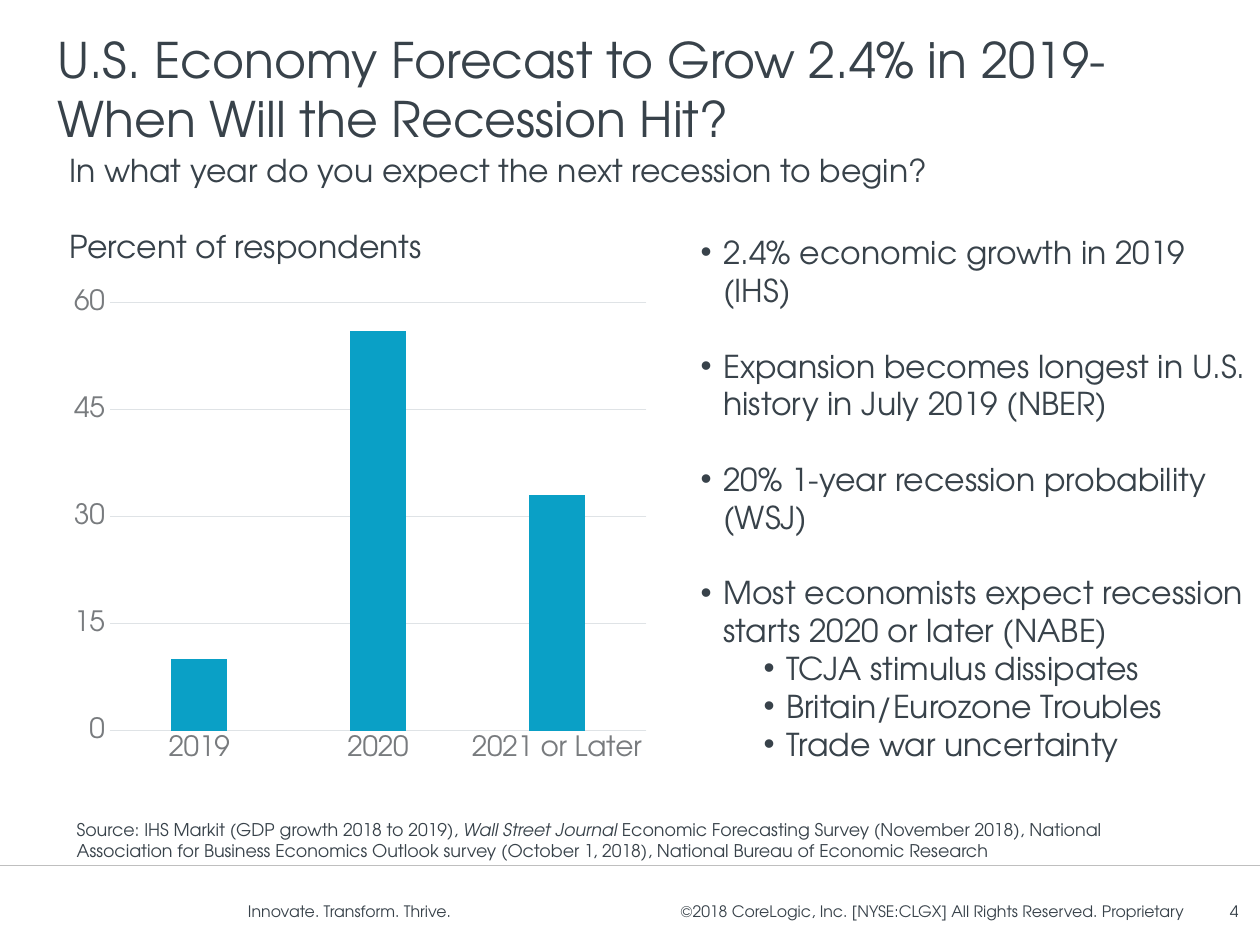
"""Build the recession forecast slide with its chart, bullets and footer."""
from dataclasses import dataclass
from typing import NamedTuple

from lxml.etree import SubElement
from pptx import Presentation
from pptx.chart.data import CategoryChartData
from pptx.dml.color import RGBColor
from pptx.enum.chart import XL_CHART_TYPE as CT, XL_TICK_MARK as TICK
from pptx.enum.shapes import MSO_CONNECTOR as CONN
from pptx.enum.text import MSO_ANCHOR as ANCHOR, MSO_AUTO_SIZE as FIT, PP_ALIGN as AL
from pptx.oxml.ns import qn
from pptx.util import Inches, Pt

FONT = "TeX Gyre Adventor"
COLORS = {"text": "38424A", "axis": "787B7E", "grid": "DFE3E6",
          "bar": "0AA0C6", "rule": "BFBFBF"}
SLIDE_W, SLIDE_H = 10, 7.5
RULE_Y = 6.87
LINE_WIDTH = Pt(0.75)
BODY_SIZE = 18
BLANK_LINE = 1.2 * BODY_SIZE
HANG = 0.18
LEVEL_STEP = 0.5


class Box(NamedTuple):
    left: float
    top: float
    width: float
    height: float


class Run(NamedTuple):
    text: str
    italic: bool = False


@dataclass
class Para:
    runs: list[Run]
    before: float = 0
    level: int = 0
    bullet: bool = False


@dataclass
class Block:
    box: Box
    paras: list[Para]
    size: float
    align: AL = AL.LEFT
    anchor: ANCHOR = ANCHOR.TOP
    wrap: bool = True
    inset: float = 0.1


CHART_BOX = Box(0.5, 2.21, 4.72, 4.13)
PLOT_BOX = Box(0.87, 2.4, 4.26, 3.4)
SURVEY = {"2019": 10, "2020": 56, "2021 or Later": 33}

POINTS = {
    "2.4% economic growth in 2019 (IHS)": [],
    "Expansion becomes longest in U.S. history in July 2019 (NBER)": [],
    "20% 1-year recession probability (WSJ)": [],
    "Most economists expect recession starts 2020 or later (NABE)": [
        "TCJA stimulus dissipates",
        "Britain/Eurozone Troubles",
        "Trade war uncertainty",
    ],
}


def plain(text: str, before: float = 0) -> Para:
    return Para([Run(text)], before)


def bullet_paras(points: dict[str, list[str]]) -> list[Para]:
    paras = []
    for point, details in points.items():
        before = BLANK_LINE if paras else 0
        paras.append(Para([Run(point)], before, bullet=True))
        paras += [Para([Run(detail)], level=1, bullet=True) for detail in details]
    return paras


TITLE = Block(Box(0.41, 0.22, 9.34, 1), [
    plain("U.S. Economy Forecast to Grow 2.4% in 2019-When Will the Recession Hit?"),
], 28, anchor=ANCHOR.BOTTOM, inset=0.05)

BODY = Block(Box(5.46, 1.8, 4.54, 4.34), bullet_paras(POINTS), BODY_SIZE)

CHART_HEADING = Block(Box(0.45, 1.15, 7.72, 1.01), [
    plain("In what year do you expect the next recession to begin?"),
    plain("Percent of respondents", BLANK_LINE),
], BODY_SIZE)

SOURCE = Block(Box(0.51, 6.45, 9.02, 0.44), [Para([
    Run("Source: IHS Markit (GDP growth 2018 to 2019), "),
    Run("Wall Street Journal ", italic=True),
    Run("Economic Forecasting Survey (November 2018), National Association for "
        "Business Economics Outlook survey (October 1, 2018), National Bureau of "
        "Economic Research"),
])], 10)

MOTTO = Block(Box(1.87, 7.11, 1.86, 0.25), [plain("Innovate. Transform. Thrive.")],
              9, wrap=False)

COPYRIGHT = Block(Box(4.35, 7.11, 5.14, 0.25), [
    plain("©2018 CoreLogic, Inc. [NYSE:CLGX] All Rights Reserved. Proprietary"),
], 9, AL.RIGHT)

PAGE_NUMBER = Block(Box(8.87, 7.1, 1.06, 0.26), [plain("4")], 9, AL.RIGHT, ANCHOR.MIDDLE)


def rgb(name: str) -> RGBColor:
    return RGBColor.from_string(COLORS[name])


def apply(obj, values: dict) -> None:
    for name, value in values.items():
        setattr(obj, name, value)


def style_font(font, size: float, color: str = "text", italic: bool = False) -> None:
    apply(font, {"name": FONT, "size": Pt(size), "bold": False, "italic": italic})
    font.color.rgb = rgb(color)


def style_line(line, color: str) -> None:
    line.color.rgb = rgb(color)
    line.width = LINE_WIDTH


def add_bullet(p, level: int) -> None:
    pPr = p._p.get_or_add_pPr()
    pPr.set("marL", str(Inches(HANG + LEVEL_STEP * level)))
    pPr.set("indent", str(Inches(-HANG)))
    SubElement(pPr, qn("a:buFont")).set("typeface", "Arial")
    SubElement(pPr, qn("a:buChar")).set("char", "•")


def write(sp, block: Block) -> None:
    apply(sp, {side: Inches(v) for side, v in block.box._asdict().items()})
    tf = sp.text_frame
    apply(tf, {"word_wrap": block.wrap, "auto_size": FIT.NONE,
               "vertical_anchor": block.anchor,
               "margin_left": Inches(block.inset), "margin_right": Inches(block.inset),
               "margin_top": Inches(0.05), "margin_bottom": Inches(0.05)})
    for i, para in enumerate(block.paras):
        p = tf.add_paragraph() if i else tf.paragraphs[0]
        apply(p, {"level": para.level, "alignment": block.align,
                  "space_before": Pt(para.before)})
        if para.bullet:
            add_bullet(p, para.level)
        for run in para.runs:
            r = p.add_run()
            r.text = run.text
            style_font(r.font, block.size, italic=run.italic)


def add_rule(s) -> None:
    y = Inches(RULE_Y)
    rule = s.shapes.add_connector(CONN.STRAIGHT, 0, y, Inches(SLIDE_W), y)
    style_line(rule.line, "rule")
    SubElement(rule._element.spPr, qn("a:effectLst"))


def fix_plot_area(chart, outer: Box, inner: Box) -> None:
    area = chart._chartSpace.chart.plotArea
    for old in area.findall(qn("c:layout")):
        area.remove(old)
    layout = SubElement(area, qn("c:layout"))
    area.insert(0, layout)
    manual = SubElement(layout, qn("c:manualLayout"))
    settings = {"layoutTarget": "inner", "xMode": "edge", "yMode": "edge",
                "x": (inner.left - outer.left) / outer.width,
                "y": (inner.top - outer.top) / outer.height,
                "w": inner.width / outer.width,
                "h": inner.height / outer.height}
    for tag, value in settings.items():
        SubElement(manual, qn(f"c:{tag}")).set("val", str(value))


def add_survey_chart(s) -> None:
    data = CategoryChartData(number_format="0")
    data.categories = list(SURVEY)
    data.add_series("Series 1", list(SURVEY.values()))
    frame = s.shapes.add_chart(CT.COLUMN_CLUSTERED, *map(Inches, CHART_BOX), data)
    chart = frame.chart
    apply(chart, {"has_legend": False, "has_title": False})
    plot = chart.plots[0]
    apply(plot, {"gap_width": 219, "overlap": -27, "vary_by_categories": False})
    fill = plot.series[0].format.fill
    fill.solid()
    fill.fore_color.rgb = rgb("bar")

    years, percent = chart.category_axis, chart.value_axis
    for axis in (years, percent):
        apply(axis, {"major_tick_mark": TICK.NONE, "minor_tick_mark": TICK.NONE})
        style_font(axis.tick_labels.font, 16, "axis")
    apply(percent, {"minimum_scale": 0, "maximum_scale": 60, "major_unit": 15})
    percent.format.line.fill.background()
    for line in (years.format.line, percent.major_gridlines.format.line):
        style_line(line, "grid")
    fix_plot_area(chart, CHART_BOX, PLOT_BOX)


def main() -> None:
    prs = Presentation()
    apply(prs, {"slide_width": Inches(SLIDE_W), "slide_height": Inches(SLIDE_H)})
    s = prs.slides.add_slide(prs.slide_layouts[1])
    write(s.shapes.title, TITLE)
    write(s.placeholders[1], BODY)
    add_rule(s)
    add_survey_chart(s)
    for block in (CHART_HEADING, SOURCE, MOTTO, COPYRIGHT, PAGE_NUMBER):
        write(s.shapes.add_textbox(0, 0, 0, 0), block)
    prs.save("out.pptx")


if __name__ == "__main__":
    main()
